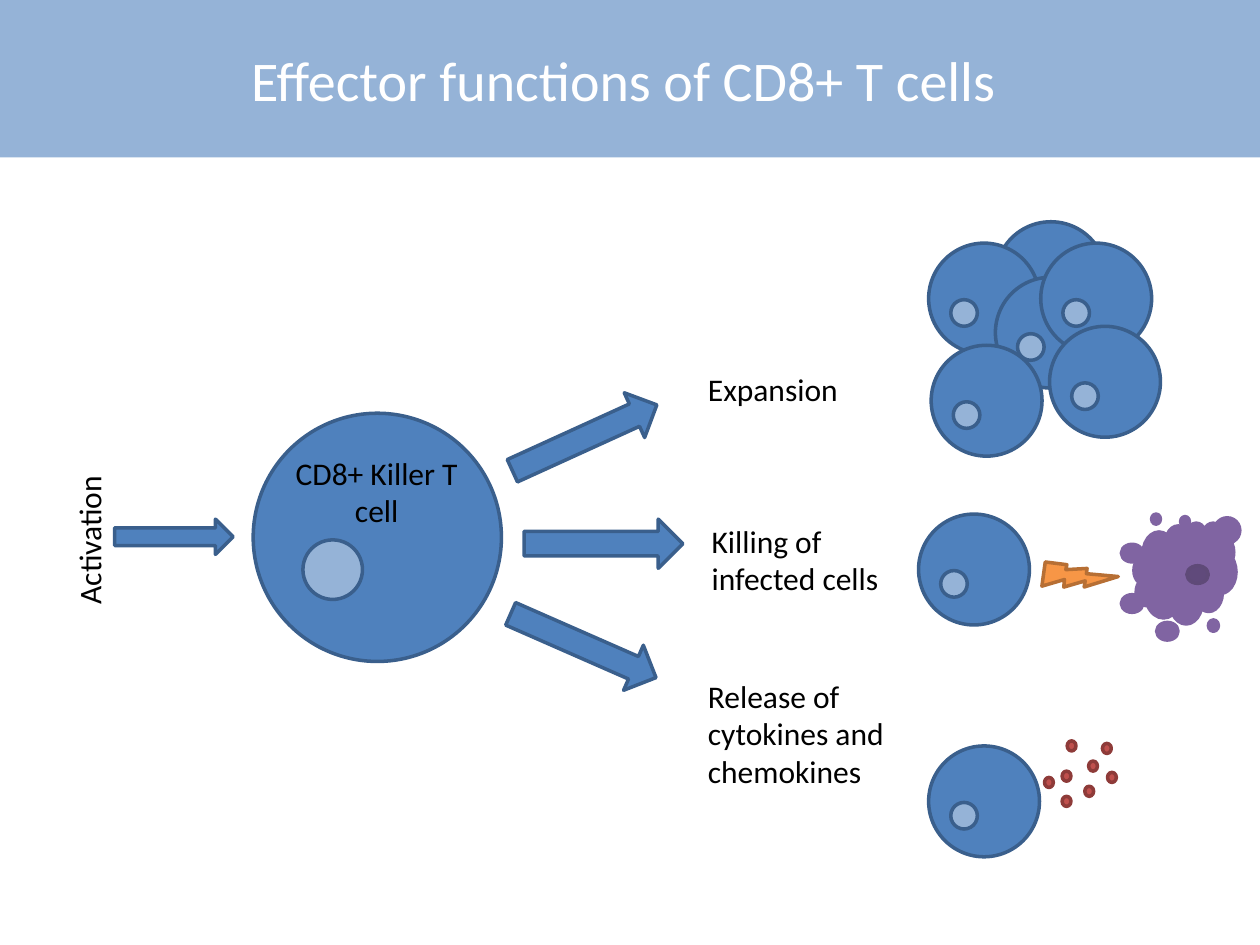
from pptx import Presentation
from pptx.dml.color import RGBColor
from pptx.enum.shapes import MSO_SHAPE
from pptx.enum.text import MSO_ANCHOR, PP_ALIGN
from pptx.util import Inches, Pt

RECT, OVAL, ARROW = MSO_SHAPE.RECTANGLE, MSO_SHAPE.OVAL, MSO_SHAPE.RIGHT_ARROW
BOLT, CLOUD = MSO_SHAPE.LIGHTNING_BOLT, MSO_SHAPE.CLOUD
LEFT, CENTER = PP_ALIGN.LEFT, PP_ALIGN.CENTER
TOP, MIDDLE = MSO_ANCHOR.TOP, MSO_ANCHOR.MIDDLE

COLS, ROWS = 100, 75
FONT = "Calibri"
WHITE, BLACK = "FFFFFF", "000000"
PALE, BLUE, NAVY = "95B3D7", "4F81BD", "3A5F8C"
RED, MAROON = "C0504D", "8E3B39"
ORANGE, BROWN = "F79646", "B76F34"
PURPLE, PLUM, PLUM_EDGE = "8064A2", "604A7B", "5F4A78"

CELL = 8.8
EXPANDED = [(79, 17.6), (73.7, 19.3), (79, 22), (82.6, 19.3), (83.3, 25.9), (73.9, 27.4)]
SINGLE = [(72.9, 40.8), (73.7, 59.2)]
CYTOKINES = [(84.7, 58.8), (86.4, 60.4), (82.9, 61.7), (84.3, 61.2),
             (84.3, 63.2), (86.1, 62.4), (87.9, 61.3), (87.5, 59)]
ARROWS = [(9.1, 41.2, 9.4, 2.8, 0), (40.1, 32.8, 12.6, 3.9, -24.5),
          (41.6, 41.2, 12.6, 3.9, 0), (40, 49.3, 12.6, 3.9, 23.7)]
DEBRIS = [(96.4, 45.8, 0.7, 0.8), (93, 42.4, 0.7, 0.8), (90.6, 44, 5.3, 1.3),
          (91.4, 40.8, 0.7, 0.8), (93.7, 41, 0.7, 0.8), (89, 47.2, 1.7, 1.4),
          (91.8, 49.4, 1.7, 1.4), (89, 43.2, 1.7, 1.4), (96.4, 41.1, 2, 2),
          (95.9, 49.2, 0.8, 0.9)]
LABELS = [("Expansion", 55.2, 28.9, 16.3, 4, 0, LEFT),
          ("Killing of infected cells", 55.5, 40.9, 15.7, 7.1, 0, LEFT),
          ("Release of cytokines and chemokines", 55.2, 53.2, 16.3, 10.1, 0, LEFT),
          ("Activation", -0.8, 39.1, 15.7, 4, 270, LEFT),
          ("CD8+ Killer T cell", 22.4, 35.5, 15, 7.1, 0, CENTER)]


def color(value):
    return RGBColor.from_string(value)


class Board:
    """Draws styled elements on one slide, placed by grid columns and rows."""

    def __init__(self, prs):
        self.slide = prs.slides.add_slide(prs.slide_layouts[6])
        self.col = prs.slide_width / COLS
        self.row = prs.slide_height / ROWS

    def box(self, x, y, w, h):
        return (round(x * self.col), round(y * self.row),
                round(w * self.col), round(h * self.row))

    def shape(self, kind, x, y, w, h, fill, line=None, turn=0):
        sp = self.slide.shapes.add_shape(kind, *self.box(x, y, w, h))
        sp.shadow.inherit = False
        sp.rotation = turn
        sp.fill.solid()
        sp.fill.fore_color.rgb = color(fill)
        if line:
            sp.line.color.rgb = color(line)
            sp.line.width = Pt(2)
        else:
            sp.line.fill.background()
        return sp

    def cell(self, x, y, size):
        self.shape(OVAL, x, y, size, size, BLUE, NAVY)
        self.shape(OVAL, x + 0.2 * size, y + 0.51 * size,
                   0.24 * size, 0.24 * size, PALE, NAVY)

    def set_text(self, sp, text, size, ink, align, anchor):
        tf = sp.text_frame
        tf.word_wrap = True
        tf.vertical_anchor = anchor
        p = tf.paragraphs[0]
        p.text = text
        p.alignment = align
        p.font.name = FONT
        p.font.size = Pt(size)
        p.font.color.rgb = color(ink)

    def title(self, text, height):
        sp = self.shape(RECT, 0, 0, COLS, height, PALE)
        self.set_text(sp, text, 32, WHITE, CENTER, MIDDLE)

    def label(self, text, x, y, w, h, turn, align):
        sp = self.slide.shapes.add_textbox(*self.box(x, y, w, h))
        sp.rotation = turn
        self.set_text(sp, text, 18, BLACK, align, TOP)


def main():
    prs = Presentation()
    prs.slide_width, prs.slide_height = Inches(10), Inches(7.5)
    board = Board(prs)
    board.title("Effector functions of CD8+ T cells ", 12.5)
    board.cell(20.1, 32.8, 19.7)
    for x, y, w, h, turn in ARROWS:
        board.shape(ARROW, x, y, w, h, BLUE, NAVY, turn)
    for x, y in EXPANDED + SINGLE:
        board.cell(x, y, CELL)
    for x, y in CYTOKINES:
        board.shape(OVAL, x, y, 0.7, 0.8, RED, MAROON)
    board.shape(BOLT, 83.2, 43.2, 4.3, 5.3, ORANGE, BROWN, 307.5)
    board.shape(CLOUD, 90, 41.5, 8.1, 8, PURPLE, PURPLE)
    for place in DEBRIS:
        board.shape(OVAL, *place, PURPLE, PURPLE)
    board.shape(OVAL, 94.2, 44.9, 1.7, 1.4, PLUM, PLUM_EDGE)
    for label in LABELS:
        board.label(*label)
    prs.save("out.pptx")


if __name__ == "__main__":
    main()
